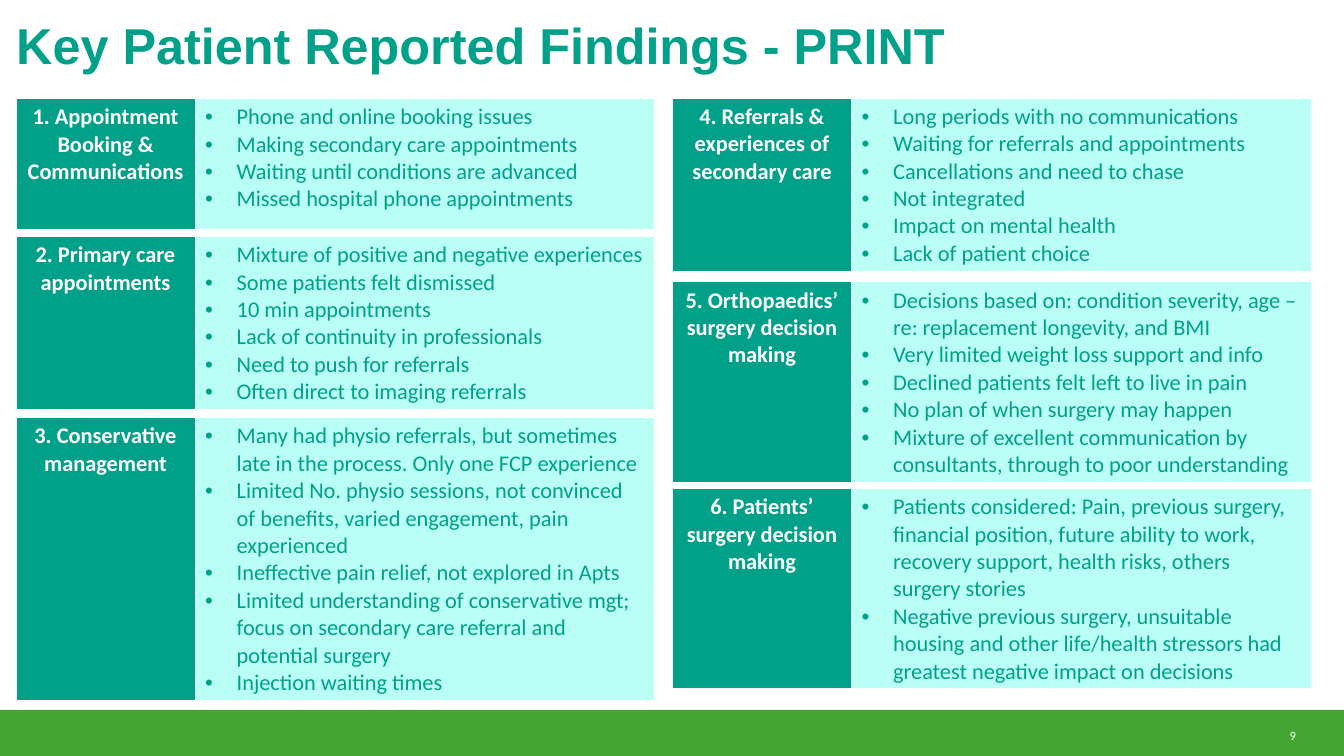
from dataclasses import dataclass

from lxml import etree
from pptx import Presentation
from pptx.dml.color import RGBColor
from pptx.enum import shapes, text
from pptx.oxml import ns
from pptx.util import Pt


@dataclass(frozen=True)
class Theme:
    teal: str = "00A089"
    mint: str = "B9FFF5"
    green: str = "43A633"
    white: str = "FFFFFF"
    title_font: str = "Arial"
    body_font: str = "Calibri"
    title_size: float = 36
    body_size: float = 16
    number_size: float = 9


@dataclass(frozen=True)
class Finding:
    left: float
    top: float
    height: float
    heading: str
    points: tuple[str, ...]


THEME = Theme()
SLIDE_W, SLIDE_H = 960, 540
BAND_H = 33
LEFT_X, RIGHT_X = 11.4, 480.3
HEADING_W, POINTS_W = 128, 328.5
BULLET_INDENT = 22.5
BORDERS = {"lnL": 1, "lnR": 1, "lnT": 1, "lnB": 3}

FINDINGS = [
    Finding(LEFT_X, 70.3, 94.3, "1. Appointment Booking & Communications", (
        "Phone and online booking issues",
        "Making secondary care appointments",
        "Waiting until conditions are advanced",
        "Missed hospital phone appointments",
    )),
    Finding(LEFT_X, 168.8, 122.5, "2. Primary care appointments", (
        "Mixture of positive and negative experiences",
        "Some patients felt dismissed",
        "10 min appointments",
        "Lack of continuity in professionals",
        "Need to push for referrals",
        "Often direct to imaging referrals",
    )),
    Finding(LEFT_X, 298.3, 199.5, "3. Conservative management", (
        "Many had physio referrals, but sometimes late in the process. "
        "Only one FCP experience",
        "Limited No. physio sessions, not convinced of benefits, "
        "varied engagement, pain experienced",
        "Ineffective pain relief, not explored in Apts",
        "Limited understanding of conservative mgt; focus on secondary care "
        "referral and potential surgery",
        "Injection waiting times",
    )),
    Finding(RIGHT_X, 70, 122.5, "4. Referrals & experiences of secondary care", (
        "Long periods with no communications",
        "Waiting for referrals and appointments",
        "Cancellations and need to chase",
        "Not integrated",
        "Impact on mental health",
        "Lack of patient choice",
    )),
    Finding(RIGHT_X, 201.3, 142, "5. Orthopaedics’ surgery decision making", (
        "Decisions based on: condition severity, age – re: replacement "
        "longevity, and BMI",
        "Very limited weight loss support and info",
        "Declined patients felt left to live in pain",
        "No plan of when surgery may happen",
        "Mixture of excellent communication by consultants, through to poor "
        "understanding",
    )),
    Finding(RIGHT_X, 348.8, 142, "6. Patients’ surgery decision making", (
        "Patients considered: Pain, previous surgery, financial position, "
        "future ability to work, recovery support, health risks, others "
        "surgery stories",
        "Negative previous surgery, unsuitable housing and other life/health "
        "stressors had greatest negative impact on decisions",
    )),
]


def write(p, content: str, *, size: float = THEME.body_size,
          font: str = THEME.body_font, color: str = THEME.teal,
          bold: bool = False, align=text.PP_ALIGN.LEFT,
          bullet: bool = False) -> None:
    p.alignment = align
    if bullet:
        pPr = p._p.get_or_add_pPr()
        pPr.set("marL", str(Pt(BULLET_INDENT)))
        pPr.set("indent", str(-Pt(BULLET_INDENT)))
        etree.SubElement(pPr, ns.qn("a:buFont"), typeface="Arial")
        etree.SubElement(pPr, ns.qn("a:buChar"), char="•")
    r = p.add_run()
    r.text = content
    r.font.size, r.font.name, r.font.bold = Pt(size), font, bold
    r.font.color.rgb = RGBColor.from_string(color)


def clear_insets(tf) -> None:
    tf.margin_left = tf.margin_top = tf.margin_right = tf.margin_bottom = 0
    tf.word_wrap = True
    tf.auto_size = text.MSO_AUTO_SIZE.NONE
    tf.vertical_anchor = text.MSO_ANCHOR.TOP


def style_cell(cell, fill: str) -> None:
    tcPr = cell._tc.get_or_add_tcPr()
    for side, width in BORDERS.items():
        ln = etree.SubElement(tcPr, ns.qn(f"a:{side}"), w=str(Pt(width)))
        solid = etree.SubElement(ln, ns.qn("a:solidFill"))
        etree.SubElement(solid, ns.qn("a:srgbClr"), val=THEME.white)
    cell.fill.solid()
    cell.fill.fore_color.rgb = RGBColor.from_string(fill)


def add_finding(s, finding: Finding) -> None:
    widths = (HEADING_W, POINTS_W)
    table = s.shapes.add_table(
        1, 2, Pt(finding.left), Pt(finding.top),
        Pt(sum(widths)), Pt(finding.height)).table
    for column, width in zip(table.columns, widths):
        column.width = Pt(width)
    heading, points = table.cell(0, 0), table.cell(0, 1)
    style_cell(heading, THEME.teal)
    style_cell(points, THEME.mint)
    write(heading.text_frame.paragraphs[0], finding.heading,
          color=THEME.white, bold=True, align=text.PP_ALIGN.CENTER)
    tf = points.text_frame
    for i, point in enumerate(finding.points):
        p = tf.add_paragraph() if i else tf.paragraphs[0]
        write(p, point, bullet=True)


def add_band(s) -> None:
    sp = s.shapes.add_shape(shapes.MSO_SHAPE.RECTANGLE, 0,
                            Pt(SLIDE_H - BAND_H), Pt(SLIDE_W), Pt(BAND_H))
    sp.shadow.inherit = False
    sp.fill.solid()
    sp.fill.fore_color.rgb = RGBColor.from_string(THEME.green)
    sp.line.fill.background()


def add_title(s, content: str) -> None:
    sp = s.shapes.title
    sp.left, sp.top, sp.width, sp.height = Pt(11.5), Pt(15), Pt(901.5), Pt(44)
    clear_insets(sp.text_frame)
    p = sp.text_frame.paragraphs[0]
    p.line_spacing = 0.9
    write(p, content, size=THEME.title_size, font=THEME.title_font, bold=True)


def add_number(s, content: str) -> None:
    sp = s.shapes.add_textbox(Pt(905.8), Pt(520), Pt(20), Pt(9.5))
    clear_insets(sp.text_frame)
    write(sp.text_frame.paragraphs[0], content, size=THEME.number_size,
          color=THEME.white, align=text.PP_ALIGN.RIGHT)


def main() -> None:
    prs = Presentation()
    prs.slide_width, prs.slide_height = Pt(SLIDE_W), Pt(SLIDE_H)
    s = prs.slides.add_slide(prs.slide_layouts[5])
    add_band(s)
    add_title(s, "Key Patient Reported Findings - PRINT")
    add_number(s, "9")
    for finding in FINDINGS:
        add_finding(s, finding)
    prs.save("out.pptx")


if __name__ == "__main__":
    main()
